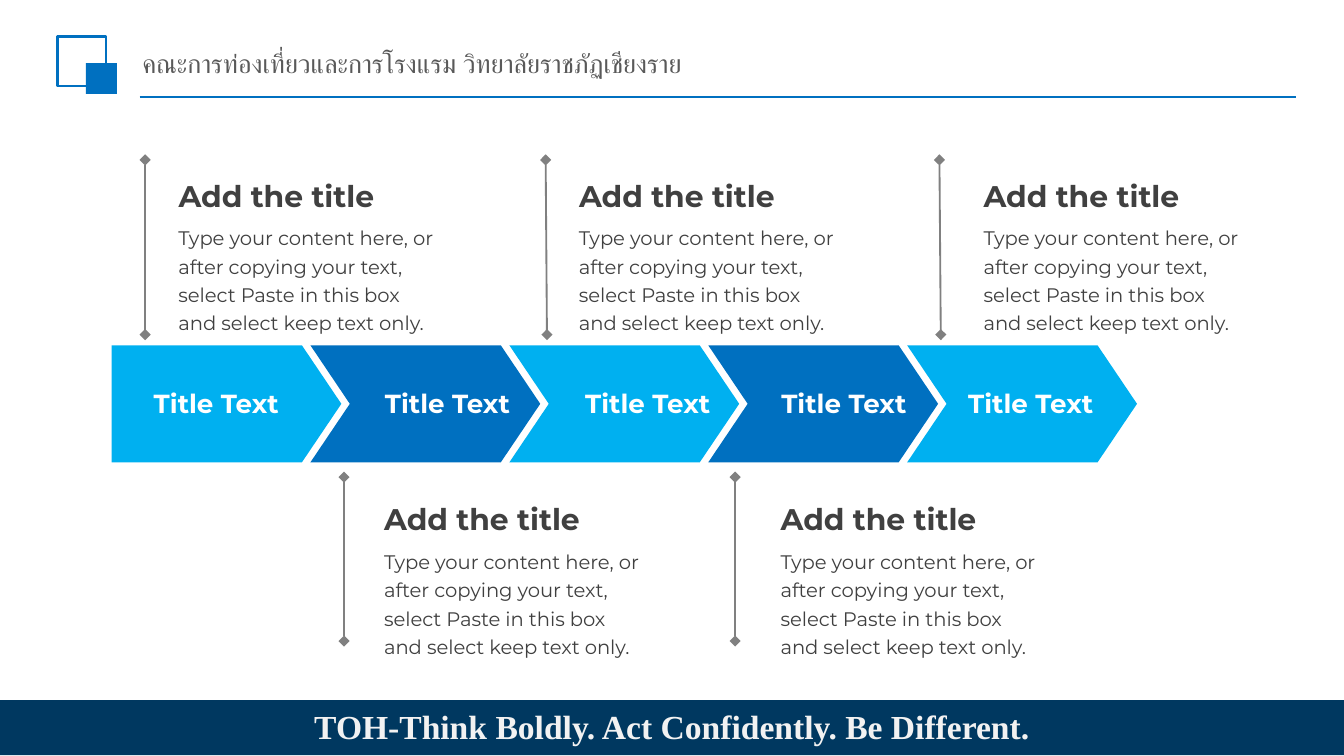
import pptx
import pptx.util
import pptx.dml.color
import pptx.enum.shapes
import pptx.enum.text
import pptx.oxml.ns
import lxml.etree

Inches, Pt = pptx.util.Inches, pptx.util.Pt
SHAPE = pptx.enum.shapes.MSO_SHAPE
ALIGN = pptx.enum.text.PP_ALIGN
ANCHOR = pptx.enum.text.MSO_ANCHOR
FIT = pptx.enum.text.MSO_AUTO_SIZE
qn = pptx.oxml.ns.qn

COLORS = {"blue": "0070C0", "sky": "00B0F0", "navy": "003860", "white": "FFFFFF",
          "pale": "F2F2F2", "gray": "808080", "dark": "404040", "title": "595959"}
BODY = ("Type your content here, or after copying your text, "
        "select Paste in this box and select keep text only.")


class Deck:
    font = "Montserrat"

    def __init__(self, slide):
        self.slide = slide

    def color(self, name):
        return pptx.dml.color.RGBColor.from_string(COLORS[name])

    def style(self, tf, size, color, bold=False, font=None, align=ALIGN.LEFT, spacing=None):
        p = tf.paragraphs[0]
        p.alignment = align
        if spacing:
            p.line_spacing = spacing
        for r in p.runs:
            r.font.size, r.font.bold = Pt(size), bold
            r.font.name = font or self.font
            r.font.color.rgb = self.color(color)

    def title(self, text, x, y, w, h):
        s = self.slide.shapes.title
        s.left, s.top, s.width, s.height = map(Inches, (x, y, w, h))
        tf = s.text_frame
        tf.text = text
        tf.auto_size, tf.vertical_anchor = FIT.NONE, ANCHOR.MIDDLE
        tf.margin_left = tf.margin_right = Inches(0.07)
        tf.margin_top = tf.margin_bottom = Inches(0.04)
        self.style(tf, 14, "title", font="Arial")

    def shape(self, kind, x, y, w, h, fill=None, line=None, adj=None):
        s = self.slide.shapes.add_shape(kind, *map(Inches, (x, y, w, h)))
        s.shadow.inherit = False
        if fill:
            s.fill.solid()
            s.fill.fore_color.rgb = self.color(fill)
        else:
            s.fill.background()
        if line:
            s.line.color.rgb = self.color(line)
            s.line.width = Pt(1.5)
        else:
            s.line.fill.background()
        if adj:
            s.adjustments[0] = adj

    def text(self, text, x, y, w, h, size, color, wrap=True, fit=FIT.NONE,
             anchor=ANCHOR.TOP, **style):
        tf = self.slide.shapes.add_textbox(*map(Inches, (x, y, w, h))).text_frame
        tf.text = text
        tf.word_wrap, tf.auto_size, tf.vertical_anchor = wrap, fit, anchor
        self.style(tf, size, color, **style)

    def line(self, x1, y1, x2, y2, color, width, ends=None):
        c = self.slide.shapes.add_connector(
            pptx.enum.shapes.MSO_CONNECTOR.STRAIGHT, *map(Inches, (x1, y1, x2, y2)))
        c.line.color.rgb = self.color(color)
        c.line.width = Pt(width)
        if ends:
            ln = c.line._get_or_add_ln()
            for tag in ("a:headEnd", "a:tailEnd"):
                lxml.etree.SubElement(ln, qn(tag), type=ends)
        lxml.etree.SubElement(c._element.spPr, qn("a:effectLst"))

    def note(self, x, y):
        self.text("Add the title", x, y, 1.78, 0.37, 16, "dark",
                  fit=FIT.SHAPE_TO_FIT_TEXT, bold=True)
        self.text(BODY, x, y + 0.33, 2.13, 0.95, 10.5, "dark",
                  fit=FIT.SHAPE_TO_FIT_TEXT, spacing=1.2)


def main():
    # Widescreen page, 16:9
    prs = pptx.Presentation()
    prs.slide_width, prs.slide_height = Inches(10), Inches(10 * 9 / 16)
    deck = Deck(prs.slides.add_slide(prs.slide_layouts[5]))

    # Header
    deck.line(1.04, 0.72, 9.64, 0.72, "blue", 1.25)
    deck.shape(SHAPE.RECTANGLE, 0.43, 0.27, 0.36, 0.37, line="blue")
    deck.shape(SHAPE.RECTANGLE, 0.64, 0.47, 0.23, 0.23, fill="blue")
    deck.title("คณะการท่องเที่ยวและการโรงแรม วิทยาลัยราชภัฏเชียงราย", 0.99, 0.29, 6.45, 0.36)

    # Footer
    deck.shape(SHAPE.RECTANGLE, 0, 5.21, 10, 0.41, fill="navy")
    deck.text("TOH-Think Boldly. Act Confidently. Be Different.", 1.34, 5.16, 7.32, 0.52,
              18, "pale", anchor=ANCHOR.MIDDLE, bold=True, font="Times New Roman",
              align=ALIGN.CENTER, spacing=0.9)

    # Chevron chain
    for i, label_x in enumerate((1.14, 2.86, 4.35, 5.81, 7.2)):
        deck.shape(SHAPE.CHEVRON if i else SHAPE.PENTAGON, 0.83 + 1.48 * i, 2.57, 1.71, 0.87,
                   fill="blue" if i % 2 else "sky", adj=0.337)
        deck.text("Title Text", label_x, 2.83, 0.94, 0.35, 14, "white", wrap=False,
                  bold=True, align=ALIGN.CENTER)

    # Notes above the chain: line bottom x, line top x, text x
    for bottom_x, top_x, text_x in ((1.08, 1.08, 1.23), (4.07, 4.06, 4.21), (7, 6.99, 7.22)):
        deck.line(bottom_x, 2.49, top_x, 1.19, "gray", 1, "diamond")
        deck.note(text_x, 1.27)

    # Notes below the chain: line x, text x
    for line_x, text_x in ((2.56, 2.76), (5.47, 5.71)):
        deck.line(line_x, 4.77, line_x, 3.55, "gray", 1, "diamond")
        deck.note(text_x, 3.68)

    prs.save("out.pptx")


if __name__ == "__main__":
    main()
